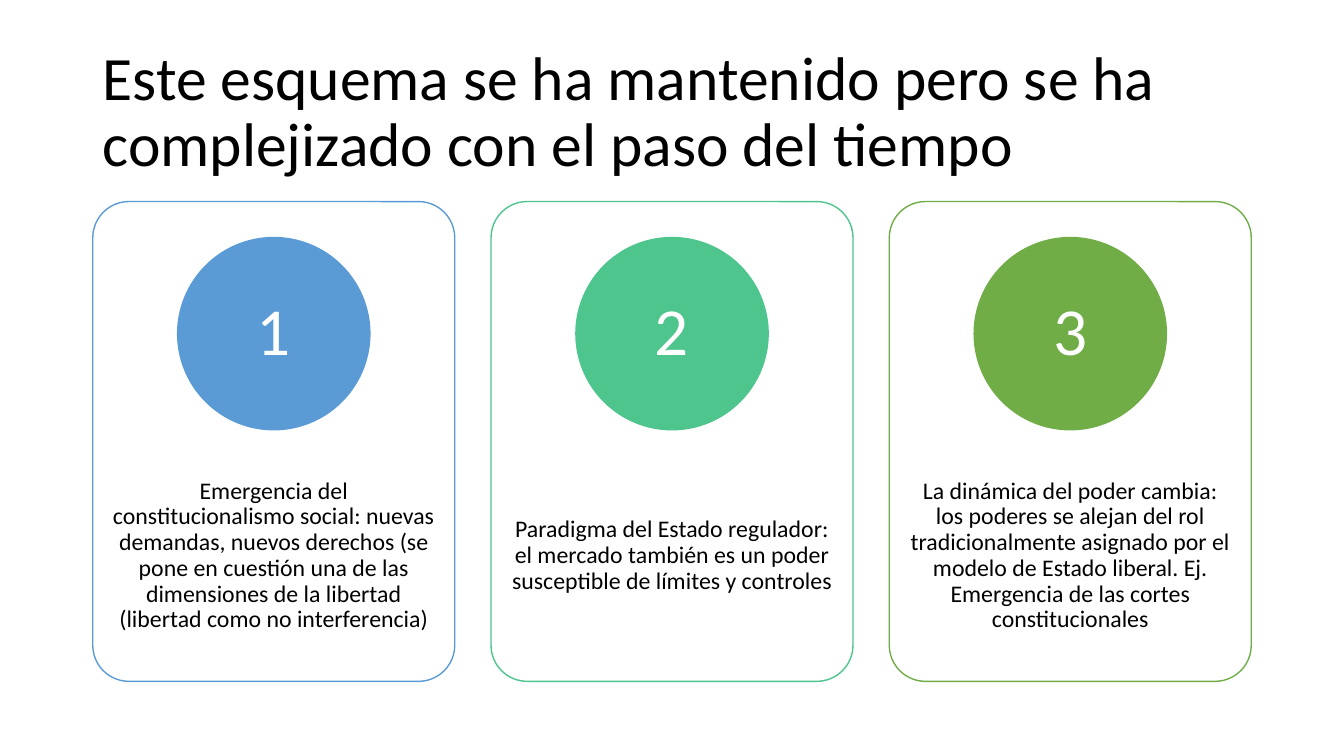
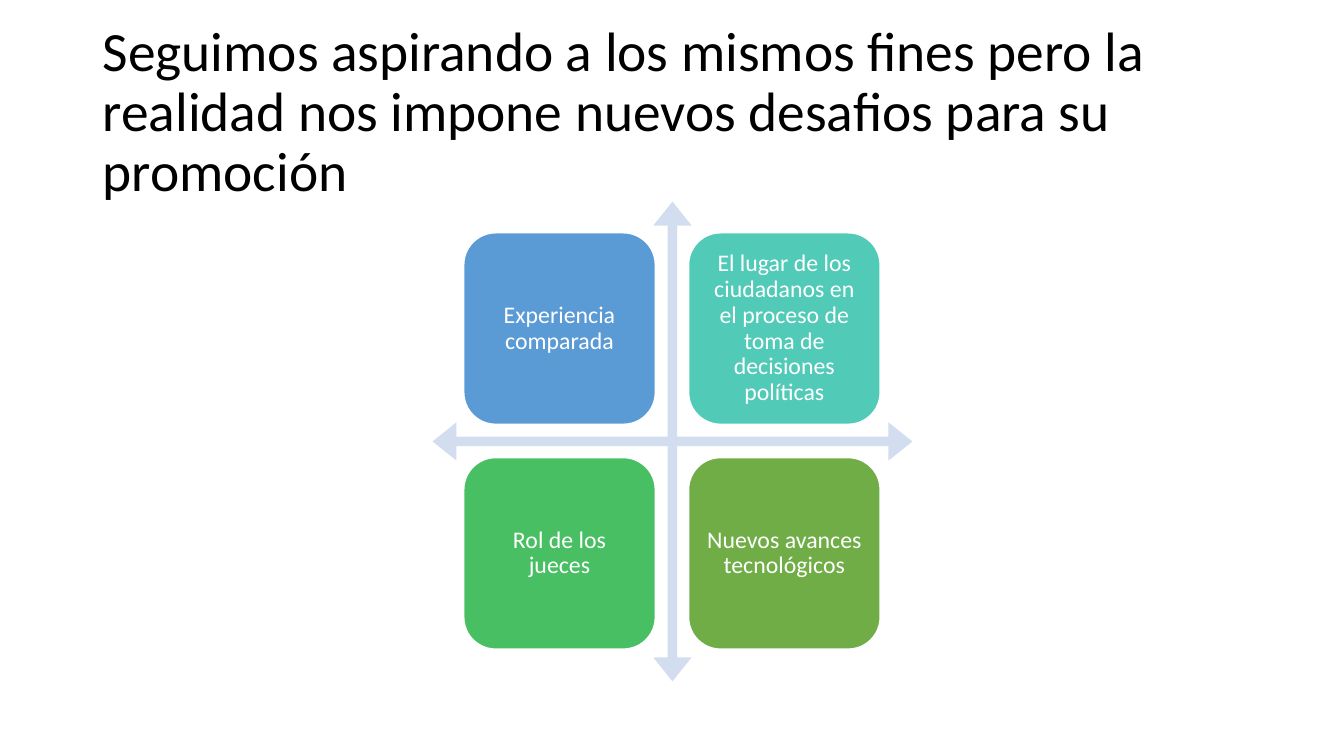
from pptx import Presentation
from pptx import util as u
from pptx.dml.color import RGBColor
from pptx.enum import shapes, text

KIND = shapes.MSO_SHAPE
BLACK, WHITE, PALE = "000000", "FFFFFF", "D2DEEF"
BLUE, GREEN = "5B9BD5", "70AD47"


def color(code):
    return RGBColor.from_string(code)


def write(shape, words, size=17, ink=BLACK, align="CENTER", pads=(0.1, 0.05, 0.1, 0.05)):
    frame = shape.text_frame
    frame.word_wrap = True
    frame.auto_size = text.MSO_AUTO_SIZE.NONE
    frame.vertical_anchor = text.MSO_ANCHOR.MIDDLE
    frame.margin_left, frame.margin_top, frame.margin_right, frame.margin_bottom = map(u.Inches, pads)
    para = frame.paragraphs[0]
    para.alignment = text.PP_ALIGN[align]
    para.line_spacing = 0.9
    run = para.add_run()
    run.text = words
    run.font.name = "Calibri"
    run.font.size = u.Pt(size)
    run.font.color.rgb = color(ink)


class Deck:
    def __init__(self):
        self.file = Presentation()
        self.file.slide_width = u.Inches(13.33)
        self.file.slide_height = u.Inches(7.5)
        self.slide = None

    def start(self, title, size):
        self.slide = self.file.slides.add_slide(self.file.slide_layouts[6])
        box = self.slide.shapes.add_textbox(*map(u.Inches, (0.92, 0.4, 11.5, 1.45)))
        write(box, title, size=size, align="LEFT")

    def shape(self, kind, x, y, w, h, fill, line=None, adjust=()):
        item = self.slide.shapes.add_shape(kind, *map(u.Inches, (x, y, w, h)))
        item.shadow.inherit = False
        item.fill.solid()
        item.fill.fore_color.rgb = color(fill)
        if line:
            item.line.color.rgb = color(line)
            item.line.width = u.Pt(1)
        else:
            item.line.fill.background()
        for i, value in enumerate(adjust):
            item.adjustments[i] = value
        return item

    def card(self, x, number, words, tint):
        y, w, h, disc = 2, 3.59, 4.76, 1.92
        panel = self.shape(KIND.ROUNDED_RECTANGLE, x, y, w, h, WHITE, tint, [0.1])
        write(panel, words, pads=(0.09, 2.53, 0.09, 0.26))
        badge = self.shape(KIND.OVAL, x + (w - disc) / 2, y + 0.35, disc, disc, tint)
        write(badge, str(number), size=48, ink=WHITE, pads=(0.1, 0.01, 0.1, 0.01))

    def tile(self, x, y, words, tint):
        item = self.shape(KIND.ROUNDED_RECTANGLE, x, y, 1.9, 1.9, tint, WHITE)
        write(item, words, ink=WHITE, pads=(0.07,) * 4)

    def cross(self, x, y, side):
        self.shape(KIND.QUAD_ARROW, x, y, side, side, PALE, adjust=[0.02, 0.04, 0.05])


def main():
    deck = Deck()

    deck.start("Este esquema se ha mantenido pero se ha complejizado con el paso del tiempo", 44)
    cards = [
        ("Emergencia del constitucionalismo social: nuevas demandas, nuevos derechos "
         "(se pone en cuestión una de las dimensiones de la libertad "
         "(libertad como no interferencia)", BLUE),
        ("Paradigma del Estado regulador: el mercado también es un poder "
         "susceptible de límites y controles", "4DC58D"),
        ("La dinámica del poder cambia: los poderes se alejan del rol tradicionalmente "
         "asignado por el modelo de Estado liberal. Ej. Emergencia de las cortes "
         "constitucionales", GREEN),
    ]
    for i, (words, tint) in enumerate(cards):
        deck.card(0.92 + 3.95 * i, i + 1, words, tint)

    deck.start("Seguimos aspirando a los mismos fines pero la realidad nos impone "
               "nuevos desafios para su promoción", 39.6)
    deck.cross(4.29, 2, 4.76)
    tiles = [
        ("Experiencia comparada", BLUE),
        ("El lugar de los ciudadanos en el proceso de toma de decisiones políticas", "52CAB8"),
        ("Rol de los jueces", "49BF64"),
        ("Nuevos avances tecnológicos", GREEN),
    ]
    for i, (words, tint) in enumerate(tiles):
        row, col = divmod(i, 2)
        deck.tile(4.6 + 2.23 * col, 2.31 + 2.23 * row, words, tint)

    deck.file.save("out.pptx")


if __name__ == "__main__":
    main()
